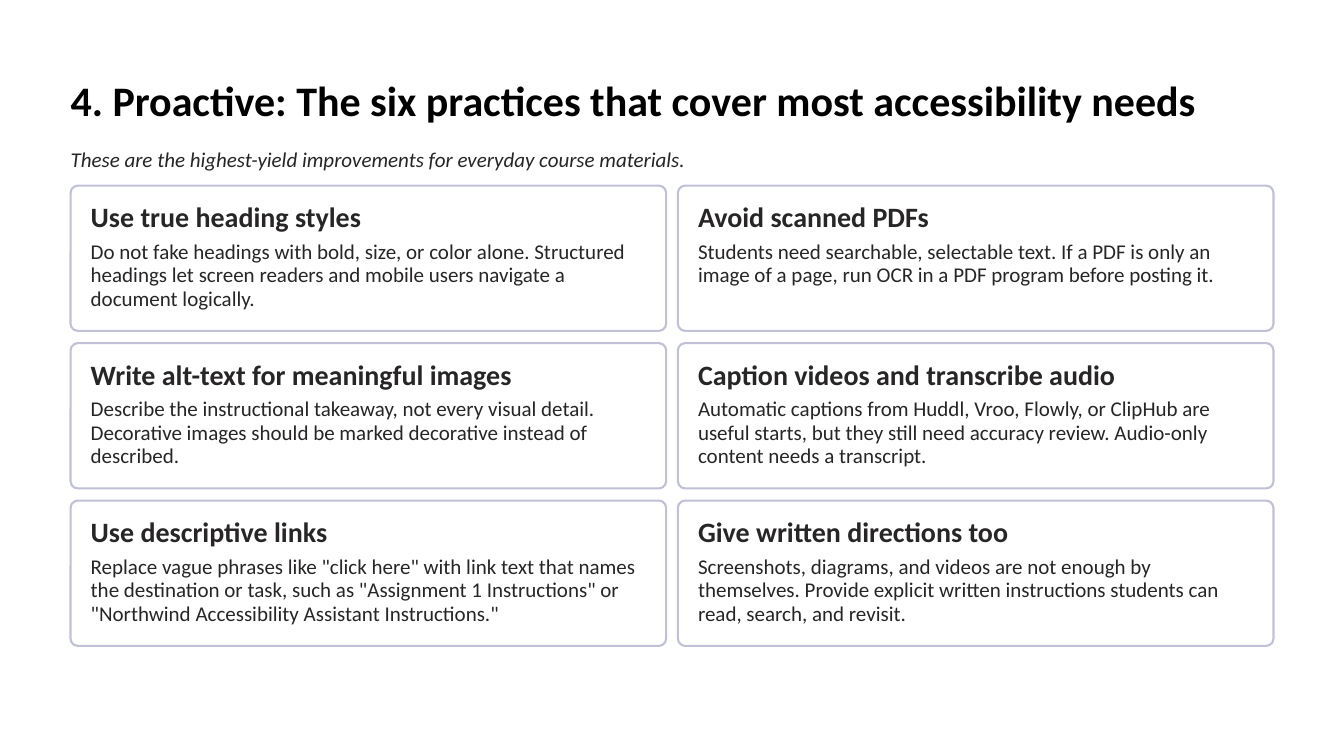
from dataclasses import dataclass
from pptx import Presentation
from pptx.dml.color import RGBColor
from pptx.enum.shapes import MSO_SHAPE
from pptx.util import Inches, Pt


@dataclass(frozen=True)
class Theme:
    font: str = "Calibri"
    paper: str = "FFFFFF"
    black: str = "000000"
    ink: str = "272525"
    edge: str = "C0C1D7"
    title: int = 36
    head: int = 24
    body: int = 18


def color(code):
    return RGBColor.from_string(code)


def write(frame, text, font, size, ink, lead, bold=False, italic=False):
    frame.word_wrap = True
    frame.margin_left = frame.margin_right = 0
    frame.margin_top = frame.margin_bottom = 0
    para = frame.paragraphs[0]
    para.line_spacing = Pt(lead)
    run = para.add_run()
    run.text = text
    run.font.name = font
    run.font.size = Pt(size)
    run.font.bold = bold
    run.font.italic = italic
    run.font.color.rgb = color(ink)


class Board:
    def __init__(self, slide, theme):
        self.slide = slide
        self.theme = theme
        fill = slide.background.fill
        fill.solid()
        fill.fore_color.rgb = color(theme.paper)

    def text(self, words, left, top, width, height, **style):
        box = self.slide.shapes.add_textbox(
            Inches(left), Inches(top), Inches(width), Inches(height))
        write(box.text_frame, words, self.theme.font, **style)

    def panel(self, left, top, width, height):
        shape = self.slide.shapes.add_shape(
            MSO_SHAPE.ROUNDED_RECTANGLE,
            Inches(left), Inches(top), Inches(width), Inches(height))
        shape.adjustments[0] = 0.05
        shape.shadow.inherit = False
        shape.fill.solid()
        shape.fill.fore_color.rgb = color(self.theme.paper)
        shape.line.color.rgb = color(self.theme.edge)
        shape.line.width = Pt(1.8)

    def card(self, head, body, left, top):
        look = self.theme
        self.panel(left, top, 7.09, 1.73)
        self.text(head, left + 0.24, top + 0.24, 6.62, 0.33,
                  size=look.head, ink=look.ink, lead=23.5, bold=True)
        self.text(body, left + 0.24, top + 0.65, 6.62, 0.85,
                  size=look.body, ink=look.ink, lead=20)


CARDS = [
    ("Use true heading styles",
     "Do not fake headings with bold, size, or color alone. Structured "
     "headings let screen readers and mobile users navigate a document "
     "logically."),
    ("Avoid scanned PDFs",
     "Students need searchable, selectable text. If a PDF is only an image "
     "of a page, run OCR in a PDF program before posting it."),
    ("Write alt-text for meaningful images",
     "Describe the instructional takeaway, not every visual detail. "
     "Decorative images should be marked decorative instead of described."),
    ("Caption videos and transcribe audio",
     "Automatic captions from Huddl, Vroo, Flowly, or ClipHub are useful "
     "starts, but they still need accuracy review. Audio-only content needs "
     "a transcript."),
    ("Use descriptive links",
     'Replace vague phrases like "click here" with link text that names the '
     'destination or task, such as "Assignment 1 Instructions" or '
     '"Northwind Accessibility Assistant Instructions."'),
    ("Give written directions too",
     "Screenshots, diagrams, and videos are not enough by themselves. "
     "Provide explicit written instructions students can read, search, and "
     "revisit."),
]


def main():
    deck = Presentation()
    deck.slide_width = Inches(16)
    deck.slide_height = Inches(9)
    look = Theme()
    board = Board(deck.slides.add_slide(deck.slide_layouts[6]), look)
    board.text("4. Proactive: The six practices that cover most "
               "accessibility needs", 0.84, 0.83, 14.22, 0.66,
               size=look.title, ink=look.black, lead=47, bold=True)
    board.text("These are the highest-yield improvements for everyday "
               "course materials.", 0.84, 1.77, 14.32, 0.28,
               size=look.body, ink=look.ink, lead=20, italic=True)
    for index, (head, body) in enumerate(CARDS):
        row, col = divmod(index, 2)
        board.card(head, body, 0.84 + 7.23 * col, 2.21 + 1.875 * row)
    deck.save("out.pptx")


if __name__ == "__main__":
    main()
